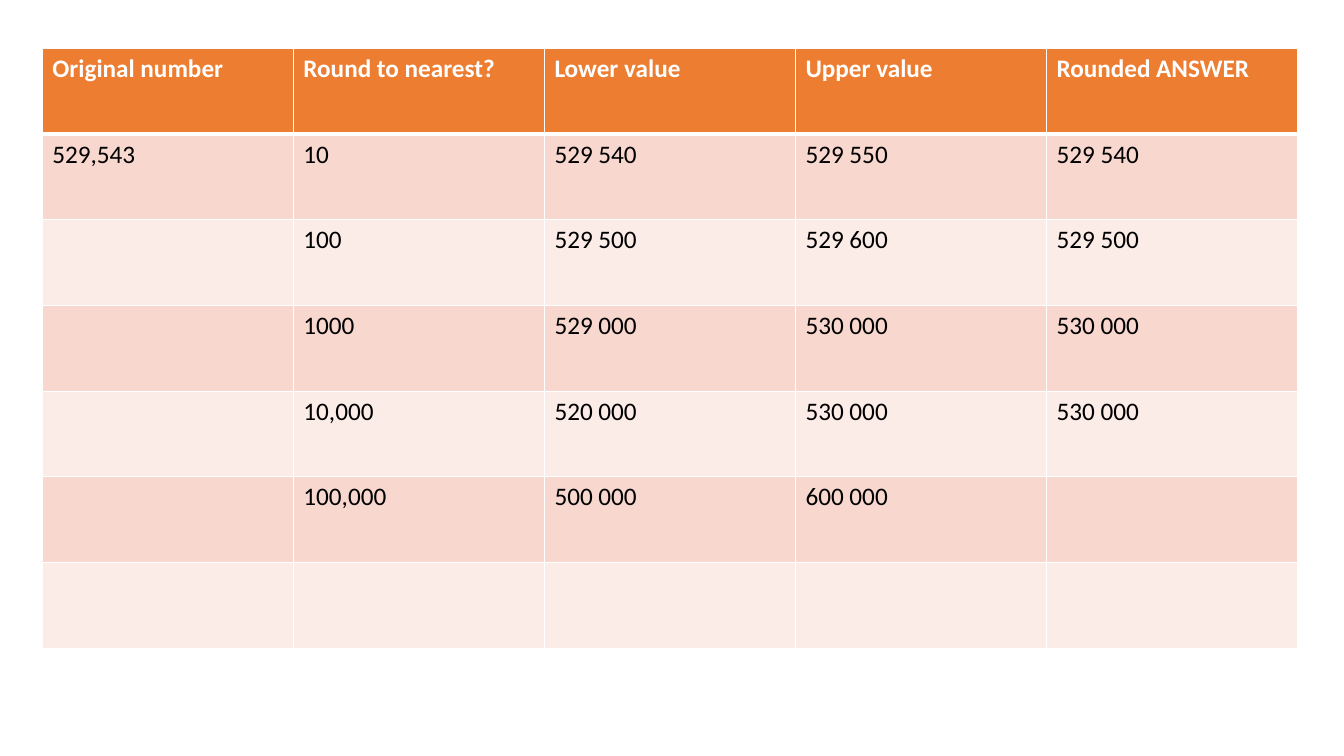
from lxml import etree
from pptx import Presentation
from pptx import util as u
from pptx.dml import color
from pptx.oxml import ns

COLOURS = {
    "header": "ED7D31",
    "odd": "F8D7CE",
    "even": "FCECE8",
    "border": "FFFFFF",
    "header_text": "FFFFFF",
    "body_text": "000000",
}

ROUNDING_ROWS = [
    ["Original number", "Round to nearest?", "Lower value", "Upper value", "Rounded ANSWER"],
    ["529,543", "10", "529 540", "529 550", "529 540"],
    ["", "100", "529 500", "529 600", "529 500"],
    ["", "1000", "529 000", "530 000", "530 000"],
    ["", "10,000", "520 000", "530 000", "530 000"],
    ["", "100,000", "500 000", "600 000", ""],
    ["", "", "", "", ""],
]


class RoundingSlide:
    font_name = "Calibri"
    font_size = u.Pt(18)
    column_width = u.Inches(2.49)
    row_height = u.Inches(0.85)

    def __init__(self, deck):
        self.page = deck.slides.add_slide(deck.slide_layouts[6])

    def rgb(self, name):
        return color.RGBColor.from_string(COLOURS[name])

    def border(self, cell, side, points):
        properties = cell._tc.get_or_add_tcPr()
        line = etree.SubElement(properties, ns.qn(f"a:ln{side}"), w=str(u.Pt(points)))
        fill = etree.SubElement(line, ns.qn("a:solidFill"))
        etree.SubElement(fill, ns.qn("a:srgbClr"), val=COLOURS["border"])

    def cell(self, cell, text, row):
        is_header = row == 0
        widths = {"L": 1, "R": 1, "T": 3 if row == 1 else 1, "B": 3 if is_header else 1}
        for side, points in widths.items():
            self.border(cell, side, points)
        cell.fill.solid()
        band = "header" if is_header else "odd" if row % 2 else "even"
        cell.fill.fore_color.rgb = self.rgb(band)
        cell.text_frame.text = text
        for span in cell.text_frame.paragraphs[0].runs:
            span.font.name = self.font_name
            span.font.size = self.font_size
            span.font.bold = is_header
            span.font.color.rgb = self.rgb("header_text" if is_header else "body_text")

    def table(self, left, top, rows):
        row_count, column_count = len(rows), len(rows[0])
        table = self.page.shapes.add_table(
            row_count, column_count, left, top,
            self.column_width * column_count, self.row_height * row_count,
        ).table
        for column in table.columns:
            column.width = self.column_width
        for row, values in enumerate(rows):
            table.rows[row].height = self.row_height
            for column, text in enumerate(values):
                self.cell(table.cell(row, column), text, row)


def main():
    deck = Presentation()
    deck.slide_width, deck.slide_height = u.Inches(13.33), u.Inches(7.5)
    RoundingSlide(deck).table(u.Inches(0.42), u.Inches(0.48), ROUNDING_ROWS)
    deck.save("out.pptx")


if __name__ == "__main__":
    main()
